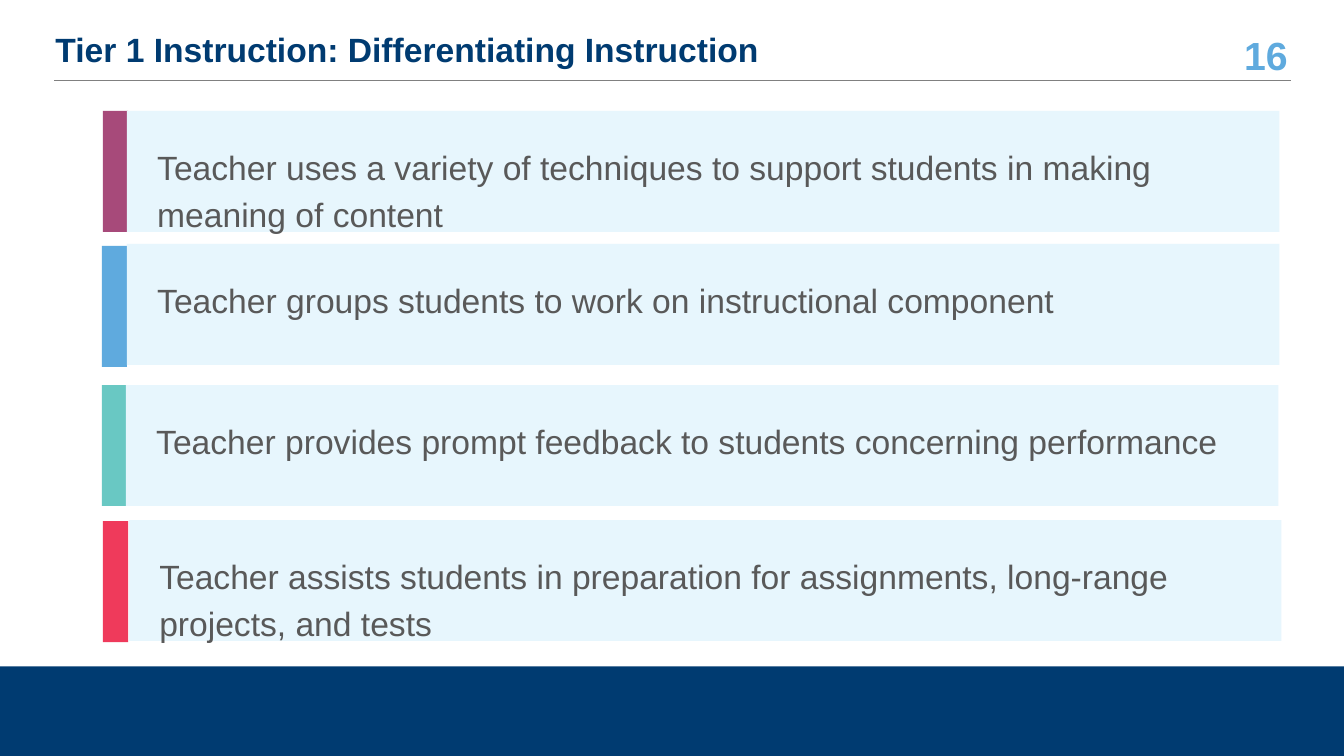
import pptx
import pptx.util
import pptx.dml.color
import pptx.enum.shapes
import pptx.enum.text
import pptx.oxml.ns
import lxml.etree

Inches = pptx.util.Inches
Pt = pptx.util.Pt
Anchor = pptx.enum.text.MSO_ANCHOR
Align = pptx.enum.text.PP_ALIGN

theme = {
    "font": "Arial",
    "navy": "003B71",
    "blue": "5FAADE",
    "plum": "A74A7A",
    "teal": "69C8C3",
    "red": "EF3A5B",
    "pale": "E7F6FD",
    "text": "595959",
    "rule": "808080",
    "body": 24,
    "page": 28,
}


def color(name):
    return pptx.dml.color.RGBColor.from_string(theme[name])


def block(left, top, width, height, fill):
    kind = pptx.enum.shapes.MSO_SHAPE.RECTANGLE
    shape = slide.shapes.add_shape(kind, Inches(left), Inches(top), Inches(width), Inches(height))
    shape.shadow.inherit = False
    shape.fill.solid()
    shape.fill.fore_color.rgb = color(fill)
    shape.line.fill.background()
    return shape


def write(shape, text, size, tint, bold, anchor, style):
    frame = shape.text_frame
    frame.word_wrap = True
    frame.auto_size = pptx.enum.text.MSO_AUTO_SIZE.NONE
    frame.vertical_anchor = anchor
    para = frame.paragraphs[0]
    para.text = text
    for key, value in style.items():
        setattr(para, key, value)
    font = para.runs[0].font
    for key, value in {"name": theme["font"], "size": Pt(theme[size]), "bold": bold}.items():
        setattr(font, key, value)
    font.color.rgb = color(tint)


deck = pptx.Presentation()
deck.slide_width = Inches(13.33)
deck.slide_height = Inches(7.5)
slide = deck.slides.add_slide(deck.slide_layouts[5])

block(0, 6.61, 13.33, 0.89, "navy")

page = slide.shapes.add_textbox(Inches(12.07), Inches(0.33), Inches(0.8), Inches(0.42))
write(page, "16", "page", "blue", True, Anchor.MIDDLE, {"alignment": Align.RIGHT})

rule = slide.shapes.add_connector(
    pptx.enum.shapes.MSO_CONNECTOR.STRAIGHT, Inches(12.8), Inches(0.8), Inches(0.54), Inches(0.8))
rule.line.color.rgb = color("rule")
rule.line.width = Pt(0.5)
props = rule._element.find(pptx.oxml.ns.qn("p:spPr"))
lxml.etree.SubElement(props, pptx.oxml.ns.qn("a:effectLst"))

title = slide.shapes.title
place = {"left": 0.45, "top": 0.3, "width": 11.6, "height": 0.42}
for key, value in place.items():
    setattr(title, key, Inches(value))
write(title, "Tier 1 Instruction: Differentiating Instruction", "body", "navy", True,
      Anchor.MIDDLE, {"alignment": Align.LEFT, "line_spacing": 0.9})

rows = [
    ("plum", 1.02, 1.1, 1.26, 1.1,
     "Teacher uses a variety of techniques to support students in making meaning of content"),
    ("blue", 1.01, 2.44, 1.26, 2.42,
     "Teacher groups students to work on instructional component"),
    ("teal", 1.01, 3.82, 1.25, 3.82,
     "Teacher provides prompt feedback to students concerning performance"),
    ("red", 1.02, 5.17, 1.28, 5.16,
     "Teacher assists students in preparation for assignments, long-range projects, and tests"),
]
style = {"alignment": Align.LEFT, "line_spacing": 1.15, "space_after": Pt(16)}
for tint, x, y, left, top, text in rows:
    block(x, y, 0.25, 1.2, tint)
    card = block(left, top, 11.43, 1.2, "pale")
    for side in ("left", "top", "right", "bottom"):
        setattr(card.text_frame, "margin_" + side, Inches(0.3))
    write(card, text, "body", "text", False, Anchor.TOP, style)

deck.save("out.pptx")
